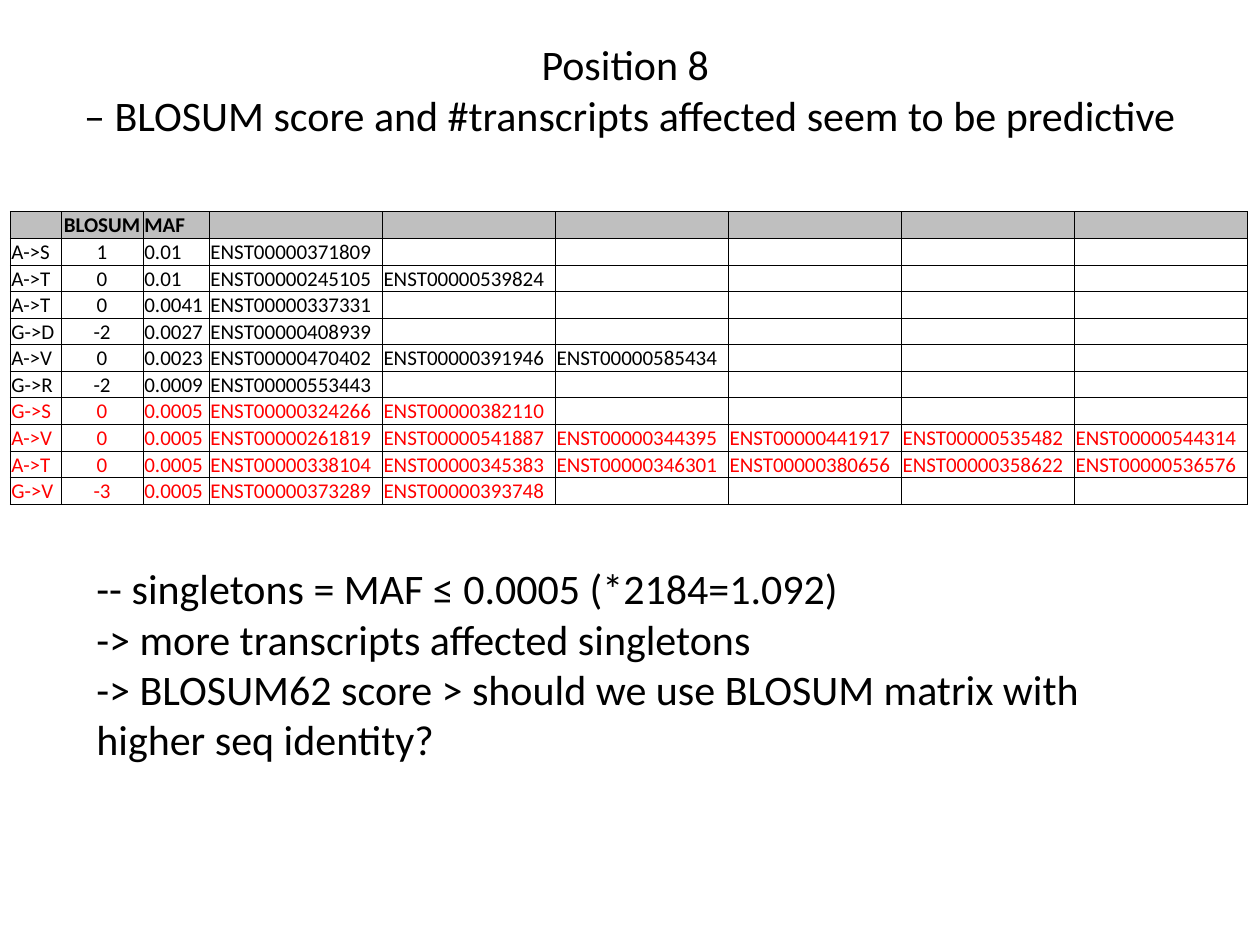
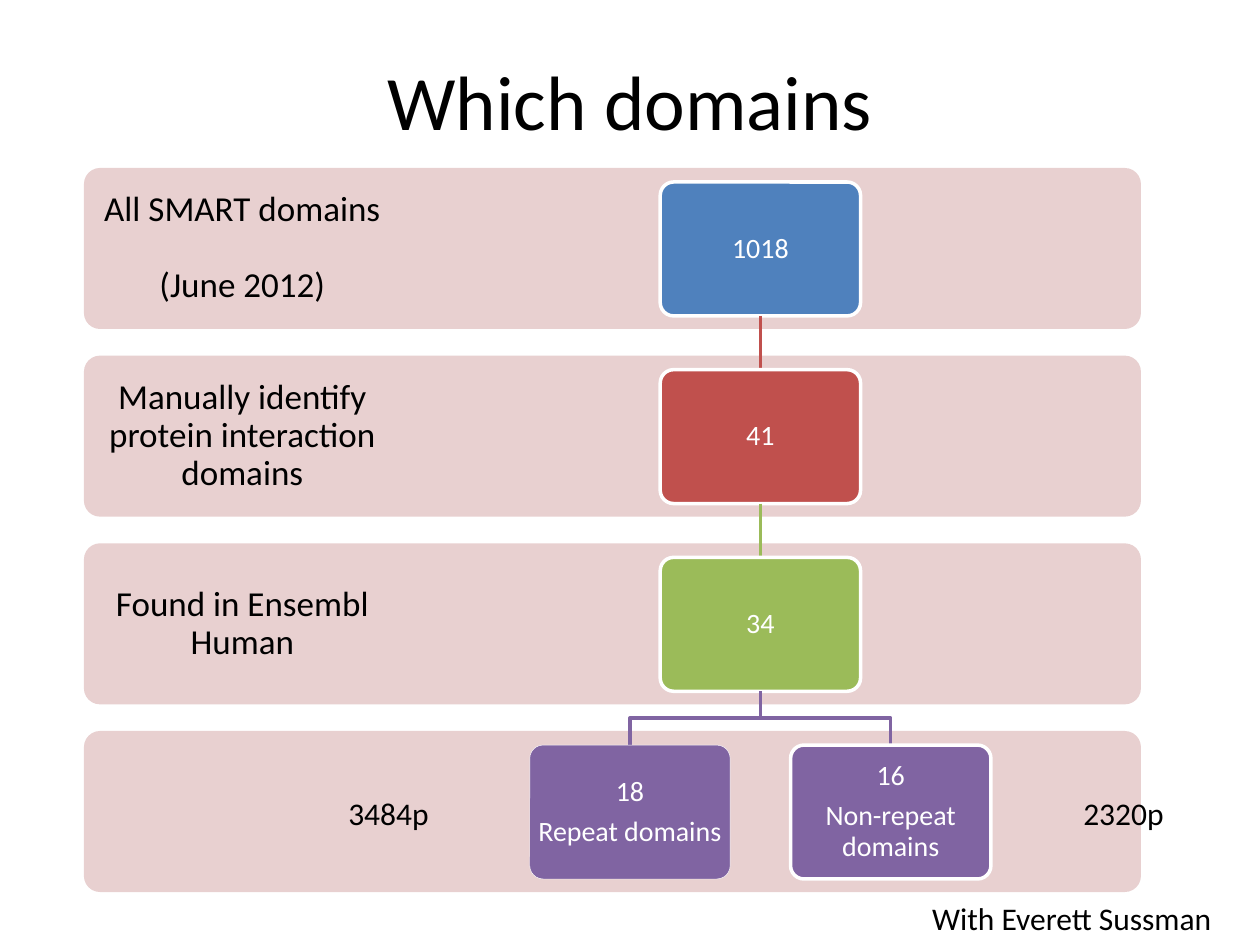
from lxml import etree
from pptx import Presentation
from pptx.dml.color import RGBColor
from pptx.enum.shapes import MSO_CONNECTOR, MSO_SHAPE
from pptx.enum.text import MSO_ANCHOR, PP_ALIGN
from pptx.oxml.ns import qn
from pptx.util import Pt

ROUND = MSO_SHAPE.ROUNDED_RECTANGLE
LINE = MSO_CONNECTOR.STRAIGHT
LEFT, CENTER = PP_ALIGN.LEFT, PP_ALIGN.CENTER
TOP, MIDDLE, BOTTOM = MSO_ANCHOR.TOP, MSO_ANCHOR.MIDDLE, MSO_ANCHOR.BOTTOM
FONT = "Calibri"
HEX = {
    "black": "000000", "white": "FFFFFF", "red": "FF0000", "gray": "BFBFBF",
    "band": "E8D0D0", "blue": "4F81BD", "brick": "C0504D", "green": "9BBB59",
    "purple": "8064A2",
}
RGB = {name: RGBColor.from_string(code) for name, code in HEX.items()}


def write(frame, text, size, color="black", align=LEFT, anchor=TOP, bold=False):
    frame.text = text
    frame.word_wrap = True
    frame.vertical_anchor = anchor
    for para in frame.paragraphs:
        para.alignment = align
        for run in para.runs:
            run.font.name = FONT
            run.font.size = Pt(size)
            run.font.bold = bold
            run.font.color.rgb = RGB[color]
    return frame


def add_text(slide, box, text, size, align=LEFT, anchor=TOP):
    shape = slide.shapes.add_textbox(*map(Pt, box))
    return write(shape.text_frame, text, size, "black", align, anchor)


deck = Presentation()
deck.slide_width, deck.slide_height = Pt(720), Pt(540)
blank = deck.slide_layouts[6]

slide = deck.slides.add_slide(blank)
add_text(slide, (36, 6, 648, 90),
         "Position 8 \v– BLOSUM score and #transcripts affected seem to be predictive",
         24, CENTER, MIDDLE)

rows = [
    ["", "BLOSUM", "MAF"],
    ["A->S", "1", "0.01", "ENST00000371809"],
    ["A->T", "0", "0.01", "ENST00000245105", "ENST00000539824"],
    ["A->T", "0", "0.0041", "ENST00000337331"],
    ["G->D", "-2", "0.0027", "ENST00000408939"],
    ["A->V", "0", "0.0023", "ENST00000470402", "ENST00000391946", "ENST00000585434"],
    ["G->R", "-2", "0.0009", "ENST00000553443"],
    ["G->S", "0", "0.0005", "ENST00000324266", "ENST00000382110"],
    ["A->V", "0", "0.0005", "ENST00000261819", "ENST00000541887", "ENST00000344395",
     "ENST00000441917", "ENST00000535482", "ENST00000544314"],
    ["A->T", "0", "0.0005", "ENST00000338104", "ENST00000345383", "ENST00000346301",
     "ENST00000380656", "ENST00000358622", "ENST00000536576"],
    ["G->V", "-3", "0.0005", "ENST00000373289", "ENST00000393748"],
]
widths = [29, 47, 37.8] + [98.9] * 6
high = 15.2
table = slide.shapes.add_table(len(rows), len(widths), Pt(5.8), Pt(121),
                               Pt(sum(widths)), Pt(high * len(rows))).table
table.first_row = table.horz_banding = False
for col, wide in zip(table.columns, widths):
    col.width = Pt(wide)
for r, row in enumerate(rows):
    table.rows[r].height = Pt(high)
    head = r == 0
    color = "red" if row[2] == "0.0005" else "black"
    for c in range(len(widths)):
        cell = table.cell(r, c)
        cell.margin_left = cell.margin_right = cell.margin_top = Pt(0.7)
        cell.margin_bottom = 0
        text = row[c] if c < len(row) else ""
        write(cell.text_frame, text, 12, color, CENTER if c == 1 else LEFT, bold=head)
        cell.vertical_anchor = BOTTOM
        if not text:
            para = cell.text_frame.paragraphs[0]
            etree.SubElement(para._p, qn("a:endParaRPr"), sz="1200")
        props = cell._tc.get_or_add_tcPr()
        for side in ("lnL", "lnR", "lnT", "lnB"):
            edge = etree.SubElement(props, qn("a:" + side), w=str(Pt(0.5)))
            fill = etree.SubElement(edge, qn("a:solidFill"))
            etree.SubElement(fill, qn("a:srgbClr"), val=HEX["black"])
        cell.fill.solid()
        cell.fill.fore_color.rgb = RGB["gray" if head else "white"]

add_text(slide, (48, 318, 600, 124),
         "-- singletons = MAF ≤ 0.0005 (*2184=1.092)\n"
         "-> more transcripts affected singletons\n"
         "-> BLOSUM62 score > should we use BLOSUM matrix with higher seq identity?", 24)

slide = deck.slides.add_slide(blank)
steps = ["All SMART domains\n(June 2012)", "Manually identify protein interaction domains",
         "Found in Ensembl Human", ""]
first, pitch, tall = 96, 107.25, 92
for i, step in enumerate(steps):
    top = first + pitch * i
    band = slide.shapes.add_shape(ROUND, Pt(48), Pt(top), Pt(604), Pt(tall))
    band.adjustments[0] = 0.1
    band.shadow.inherit = False
    band.fill.solid()
    band.fill.fore_color.rgb = RGB["band"]
    band.line.fill.background()
    if step:
        frame = add_text(slide, (48, top, 181, tall), step, 20, CENTER, MIDDLE)
        frame.margin_left = frame.margin_right = Pt(11)
        for para in frame.paragraphs:
            para.line_spacing = 0.9
        for para in frame.paragraphs[:-1]:
            para.space_after = Pt(22)

mid, shift = 434.5, 74.5
wide, high = 114.5, 76.5
nodes = [
    (0, mid, "1018", "blue", 2),
    (1, mid, "41", "brick", 2),
    (2, mid, "34", "green", 2),
    (3, mid - shift, "18\nRepeat domains", "purple", 0.25),
    (3, mid + shift, "16\nNon-repeat domains", "purple", 2),
]
for level, x, text, color, weight in nodes:
    top = first + 8 + pitch * level
    start = top - pitch + high
    if level:
        if x == mid:
            link = slide.shapes.add_connector(LINE, Pt(mid), Pt(start), Pt(mid), Pt(top))
            etree.SubElement(link._element.spPr, qn("a:effectLst"))
        else:
            bend = (start + top) / 2
            path = slide.shapes.build_freeform(Pt(mid), Pt(start))
            path.add_line_segments([(Pt(mid), Pt(bend)), (Pt(x), Pt(bend)), (Pt(x), Pt(top))],
                                   close=False)
            link = path.convert_to_shape()
            link.shadow.inherit = False
            link.fill.background()
        link.line.color.rgb = RGB[color]
        link.line.width = Pt(2)
    node = slide.shapes.add_shape(ROUND, Pt(x - wide / 2), Pt(top), Pt(wide), Pt(high))
    node.adjustments[0] = 0.1
    node.shadow.inherit = False
    node.fill.solid()
    node.fill.fore_color.rgb = RGB[color]
    node.line.color.rgb = RGB["white"]
    node.line.width = Pt(weight)
    frame = write(node.text_frame, text, 16, "white", CENTER, MIDDLE)
    frame.margin_left = frame.margin_right = Pt(2)
    for para in frame.paragraphs:
        para.line_spacing = 0.9
    for para in frame.paragraphs[:-1]:
        para.space_after = Pt(5.6)

add_text(slide, (36, 12, 648, 90), "Which domains", 44, CENTER, MIDDLE)
add_text(slide, (525.6, 510, 176.4, 29), "With Everett Sussman", 18).word_wrap = False
for x, text in ((162, "3484p"), (582, "2320p")):
    add_text(slide, (x, 450, 120, 29), text, 18, CENTER)

deck.save("out.pptx")
